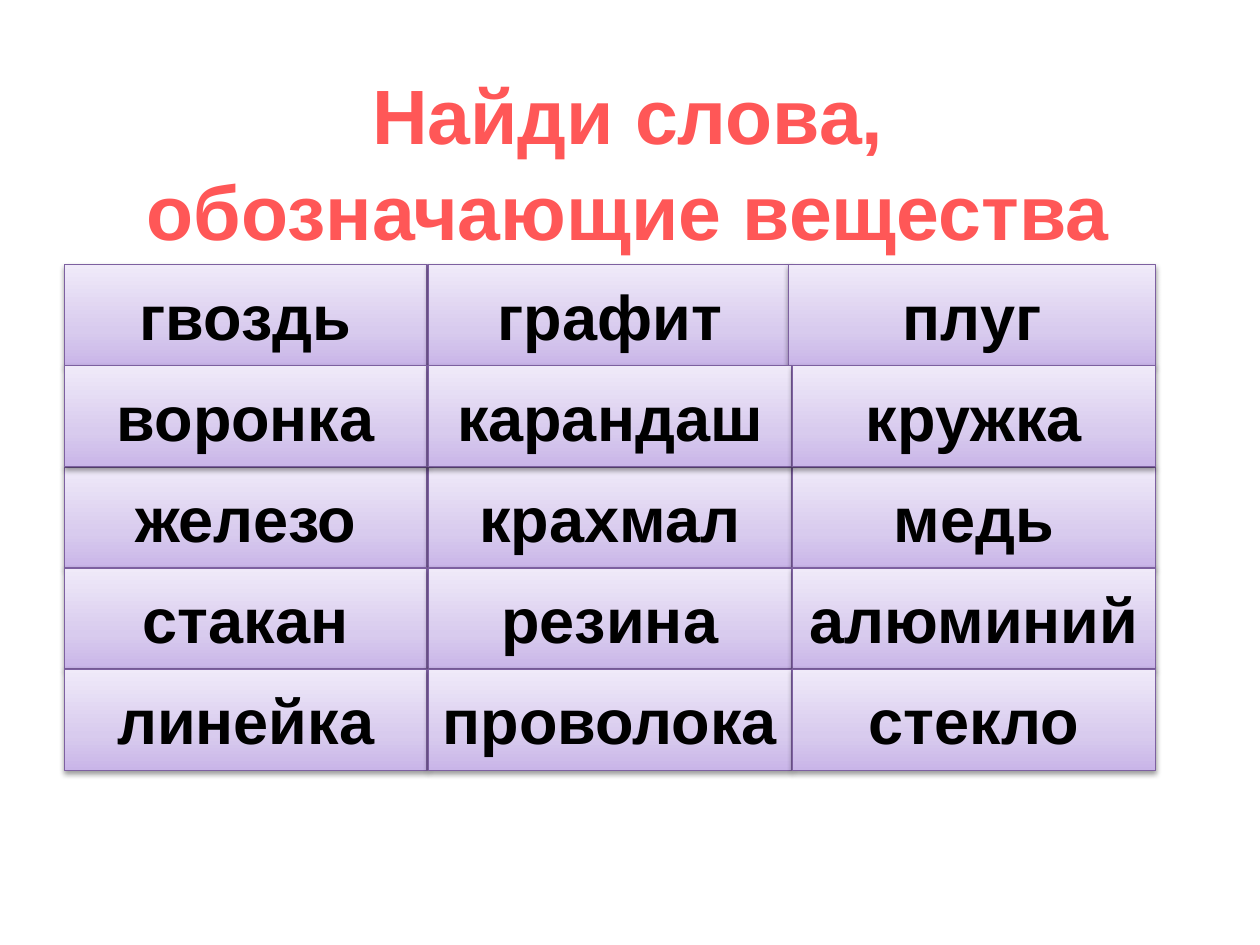
from lxml import etree
from pptx import Presentation
from pptx.dml.color import RGBColor
from pptx.enum.shapes import MSO_SHAPE as SHAPE
from pptx.enum.text import MSO_ANCHOR as ANCHOR, MSO_AUTO_SIZE as AUTO_SIZE, PP_ALIGN as ALIGN
from pptx.oxml import parse_xml
from pptx.util import Pt

NS = 'xmlns:a="http://schemas.openxmlformats.org/drawingml/2006/main"'
STOPS = [(0, "C9B5E8"), (35, "D8CBEE"), (100, "F0EAF9")]
WORDS = [
    ["гвоздь", "графит", "плуг"],
    ["воронка", "карандаш", "кружка"],
    ["железо", "крахмал", "медь"],
    ["стакан", "резина", "алюминий"],
    ["линейка", "проволока", "стекло"],
]
# Shadows fall on the rows stacked earlier
STACKING = [2, 0, 3, 4, 1]


def color(value):
    return RGBColor.from_string(value)


def write(sp, text, size, hex_color):
    tf = sp.text_frame
    frame = {"word_wrap": True, "auto_size": AUTO_SIZE.NONE, "vertical_anchor": ANCHOR.MIDDLE}
    for name, value in frame.items():
        setattr(tf, name, value)
    p = tf.paragraphs[0]
    p.alignment = ALIGN.CENTER
    r = p.add_run()
    r.text = text
    for name, value in {"name": "Arial", "size": Pt(size), "bold": True}.items():
        setattr(r.font, name, value)
    r.font.color.rgb = color(hex_color)
    return p


def add_title(slide, left, top, width, height):
    sp = slide.shapes.title
    box = {"left": left, "top": top, "width": width, "height": height}
    for name, value in box.items():
        setattr(sp, name, Pt(value))
    p = write(sp, "Найди слова, обозначающие вещества", 44, "FF5757")
    p.line_spacing = 1.05


def style_cell(sp):
    # Outline
    sp.line.color.rgb = color("7D60A0")
    sp.line.width = Pt(0.75)
    # Three-stop gradient, rising from dark to light
    sp.fill.gradient()
    grad = sp.fill._xPr.find("{*}gradFill")
    stops = "".join(
        f'<a:gs pos="{pos * 1000}"><a:srgbClr val="{value}"/></a:gs>' for pos, value in STOPS)
    grad.getparent().replace(grad, parse_xml(
        f'<a:gradFill {NS} rotWithShape="1"><a:gsLst>{stops}</a:gsLst>'
        '<a:lin ang="16200000" scaled="0"/></a:gradFill>'))
    # Soft shadow below
    sp.shadow.inherit = False
    effects = sp._element.spPr.find("{*}effectLst")
    effects.append(etree.fromstring(
        f'<a:outerShdw {NS} blurRad="{Pt(3.1)}" dist="{Pt(1.6)}" dir="5400000" rotWithShape="0">'
        '<a:srgbClr val="000000"><a:alpha val="38000"/></a:srgbClr></a:outerShdw>'))


def add_word_grid(slide, left, top, width, height):
    group = slide.shapes.add_group_shape()
    gap = 0.72
    cell_w = (width - 2 * gap) / 3
    cell_h = height / len(WORDS)
    for row in STACKING:
        for col, word in enumerate(WORDS[row]):
            # The last cell of the first row reaches further left
            extra = 2.2 if (row, col) == (0, 2) else 0
            x = left + col * (cell_w + gap) - extra
            sp = group.shapes.add_shape(
                SHAPE.RECTANGLE, Pt(x), Pt(top + row * cell_h), Pt(cell_w + extra), Pt(cell_h))
            style_cell(sp)
            write(sp, word, 36, "000000")


def main():
    prs = Presentation()
    prs.slide_width, prs.slide_height = Pt(720), Pt(540)
    slide = prs.slides.add_slide(prs.slide_layouts[5])
    add_title(slide, 48.24, 43.2, 621.36, 95.76)
    add_word_grid(slide, 36.72, 151.2, 623.52, 289)
    prs.save("out.pptx")


if __name__ == "__main__":
    main()
